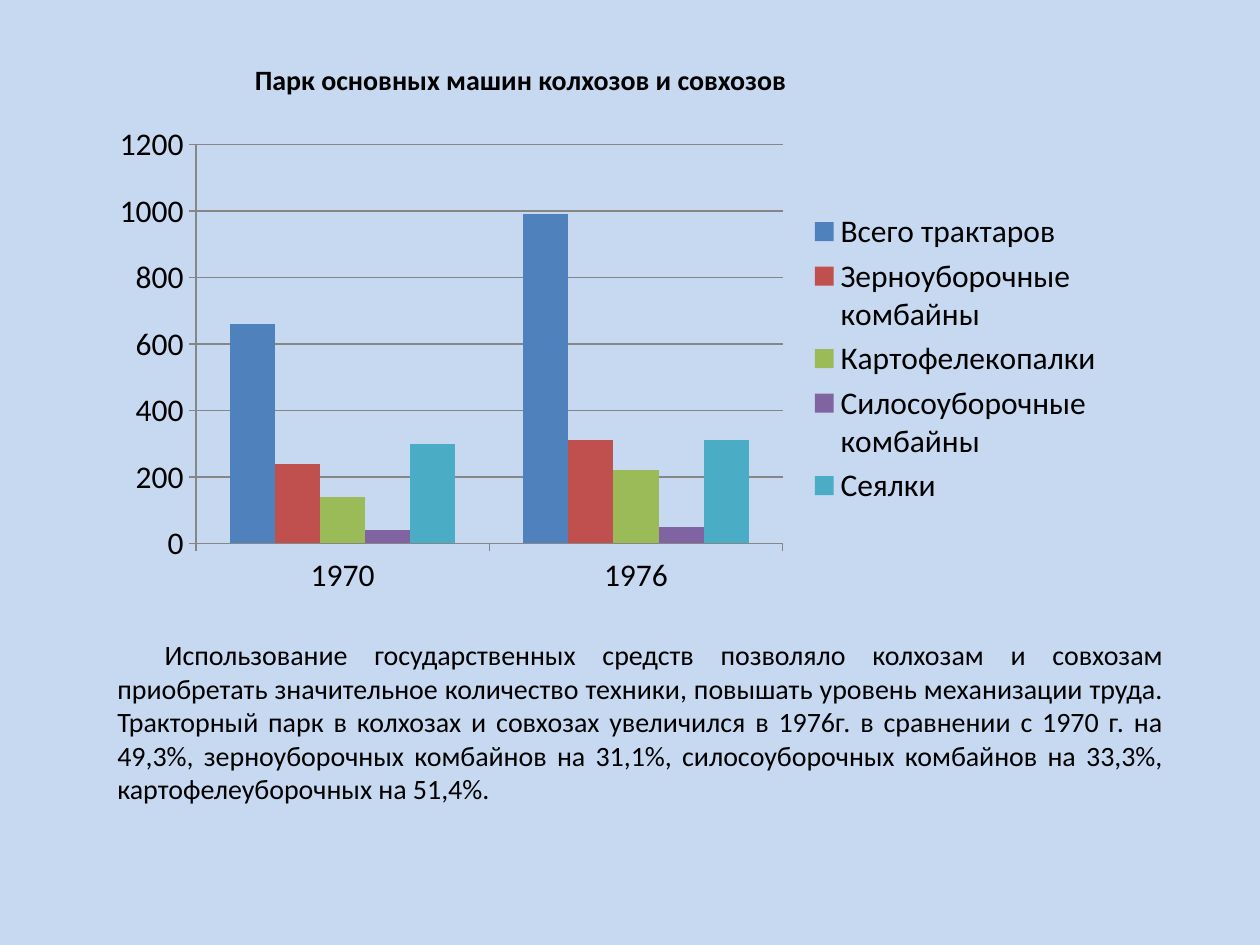
import pptx
import pptx.chart.data
import pptx.dml.color
import pptx.enum.chart
import pptx.enum.text
import pptx.oxml
import pptx.oxml.ns
import pptx.util
from dataclasses import dataclass

Pt = pptx.util.Pt
RGB = pptx.dml.color.RGBColor.from_string


@dataclass(frozen=True)
class Theme:
    font: str = "Calibri"
    background: str = "C6D9F1"
    text: str = "000000"
    line: str = "868686"
    series: tuple = ("4F81BD", "C0504D", "9BBB59", "8064A2", "4BACC6")
    body_size: int = 16
    chart_size: int = 18


THEME = Theme()
TITLE = "Парк основных машин колхозов и совхозов"
BODY = (
    "Использование государственных средств позволяло колхозам и совхозам "
    "приобретать значительное количество техники, повышать уровень механизации "
    "труда. Тракторный парк в колхозах и совхозах увеличился в 1976г. в сравнении "
    "с 1970 г. на 49,3%, зерноуборочных комбайнов на 31,1%, силосоуборочных "
    "комбайнов на 33,3%, картофелеуборочных на 51,4%."
)
YEARS = ("1970", "1976")
MACHINES = {
    "Всего трактаров": (660, 990),
    "Зерноуборочные комбайны": (240, 310),
    "Картофелекопалки": (140, 220),
    "Силосоуборочные комбайны": (40, 50),
    "Сеялки": (300, 310),
}
PLOT_LAYOUT = {"x": 0.09, "y": 0.06, "w": 0.58, "h": 0.82}


def style_font(font, size, bold=False):
    font.name = THEME.font
    font.size = Pt(size)
    font.bold = bold
    font.color.rgb = RGB(THEME.text)


def write_text(sp, text, align, bold=False):
    tf = sp.text_frame
    tf.word_wrap = True
    tf.auto_size = pptx.enum.text.MSO_AUTO_SIZE.NONE
    tf.vertical_anchor = pptx.enum.text.MSO_ANCHOR.MIDDLE
    p = tf.paragraphs[0]
    p.text = text
    p.alignment = align
    style_font(p.font, THEME.body_size, bold)
    return p


def add_title(s):
    sp = s.shapes.title
    sp.left, sp.top, sp.width, sp.height = Pt(127.5), Pt(32), Pt(340), Pt(26.5)
    p = write_text(sp, TITLE, pptx.enum.text.PP_ALIGN.CENTER, bold=True)
    p.space_before = Pt(0)


def add_body(s):
    sp = s.shapes.add_textbox(Pt(60), Pt(360), Pt(612), Pt(104.5))
    p = write_text(sp, BODY, pptx.enum.text.PP_ALIGN.JUSTIFY)
    p._p.get_or_add_pPr().set("indent", str(Pt(27)))


def style_axis(axis):
    axis.major_tick_mark = pptx.enum.chart.XL_TICK_MARK.OUTSIDE
    axis.minor_tick_mark = pptx.enum.chart.XL_TICK_MARK.NONE
    axis.format.line.color.rgb = RGB(THEME.line)
    axis.format.line.width = Pt(0.75)
    style_font(axis.tick_labels.font, THEME.chart_size)


def place_plot(chart):
    modes = '<c:layoutTarget val="inner"/><c:xMode val="edge"/><c:yMode val="edge"/>'
    sizes = "".join(f'<c:{k} val="{v}"/>' for k, v in PLOT_LAYOUT.items())
    layout = pptx.oxml.parse_xml(
        f'<c:layout {pptx.oxml.ns.nsdecls("c")}>'
        f"<c:manualLayout>{modes}{sizes}</c:manualLayout></c:layout>"
    )
    area = chart._chartSpace.chart.plotArea
    for old in area.findall(pptx.oxml.ns.qn("c:layout")):
        area.remove(old)
    area.insert(0, layout)


def add_machine_chart(s):
    data = pptx.chart.data.CategoryChartData()
    data.categories = YEARS
    for name, values in MACHINES.items():
        data.add_series(name, values)
    chart = s.shapes.add_chart(
        pptx.enum.chart.XL_CHART_TYPE.COLUMN_CLUSTERED,
        Pt(60), Pt(66), Pt(578), Pt(278), data,
    ).chart
    style_font(chart.font, THEME.chart_size)
    chart.has_title = False
    chart.has_legend = True
    chart.legend.position = pptx.enum.chart.XL_LEGEND_POSITION.RIGHT
    chart.legend.include_in_layout = False
    style_font(chart.legend.font, THEME.chart_size)

    plot = chart.plots[0]
    plot.gap_width = 150
    plot.overlap = 0
    plot.vary_by_categories = False
    for series, color in zip(plot.series, THEME.series):
        series.format.fill.solid()
        series.format.fill.fore_color.rgb = RGB(color)

    for axis in (chart.category_axis, chart.value_axis):
        style_axis(axis)
    value_axis = chart.value_axis
    value_axis.minimum_scale = 0
    value_axis.maximum_scale = 1200
    value_axis.major_unit = 200
    value_axis.has_major_gridlines = True
    grid = value_axis.major_gridlines.format.line
    grid.color.rgb = RGB(THEME.line)
    grid.width = Pt(0.75)
    place_plot(chart)


def main():
    prs = pptx.Presentation()
    prs.slide_width, prs.slide_height = Pt(720), Pt(540)
    s = prs.slides.add_slide(prs.slide_layouts[5])
    s.background.fill.solid()
    s.background.fill.fore_color.rgb = RGB(THEME.background)
    add_title(s)
    add_machine_chart(s)
    add_body(s)
    prs.save("out.pptx")


if __name__ == "__main__":
    main()
